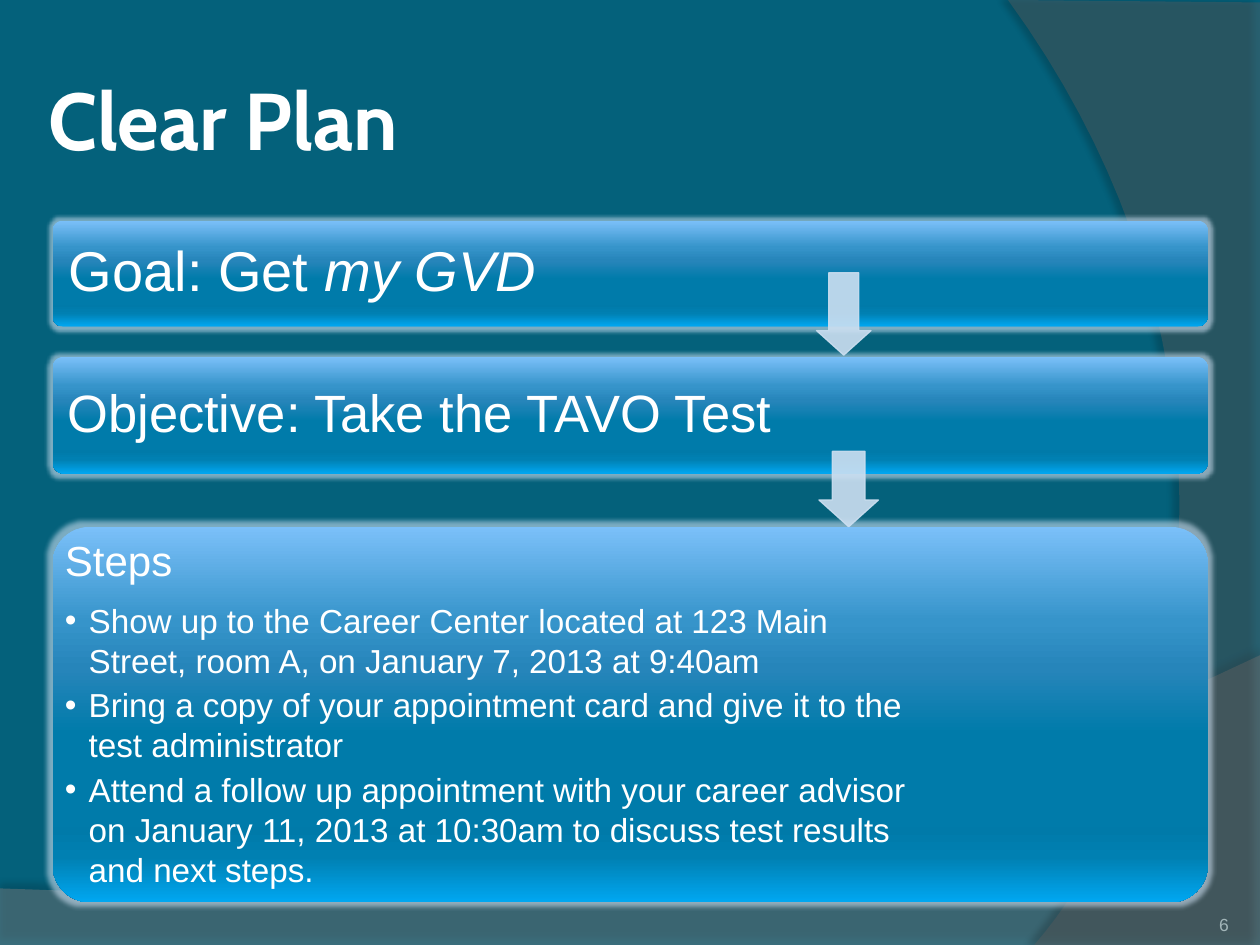
import pptx
import pptx.util
import pptx.dml.color
import pptx.enum.shapes
import pptx.enum.text
import pptx.oxml
import pptx.oxml.ns

Cm = pptx.util.Cm
Pt = pptx.util.Pt
RGB = pptx.dml.color.RGBColor
KIND = pptx.enum.shapes.MSO_SHAPE
ANCHOR = pptx.enum.text.MSO_ANCHOR
ALIGN = pptx.enum.text.PP_ALIGN
NS = pptx.oxml.ns.nsdecls("a")

TEAL = RGB(0x04, 0x61, 0x7B)
GRAY = RGB(0x7F, 0x7F, 0x7F)
DARK = RGB(0x5E, 0x5E, 0x5E)
WHITE = RGB(0xFF, 0xFF, 0xFF)
PALE = RGB(0xCC, 0xDF, 0xF1)
MUTED = RGB(0xA2, 0xB5, 0xB8)
BLACK = RGB(0, 0, 0)
STOPS = [
    (0, RGB(0x7B, 0xC0, 0xF9)), (25, RGB(0x36, 0x94, 0xCA)),
    (38, RGB(0x26, 0x85, 0xBA)), (55, RGB(0x00, 0x7B, 0xAA)),
    (80, RGB(0x00, 0x7A, 0xA9)), (88, RGB(0x00, 0x80, 0xB2)),
    (100, RGB(0x00, 0xA7, 0xF1)),
]
LEFT = 1.06
STEPS = [
    "Show up to the Career Center located at 123 Main Street, room A, "
    "on January 7, 2013 at 9:40am",
    "Bring a copy of your appointment card and give it to the "
    "test administrator",
    "Attend a follow up appointment with your career advisor on January 11, "
    "2013 at 10:30am to discuss test results and next steps.",
]


def node(xml):
    return pptx.oxml.parse_xml(xml)


def tint(color, alpha):
    return (f'<a:srgbClr val="{color}"><a:alpha val="{alpha * 1000}"/>'
            '</a:srgbClr>')


def fade(fill, color, alpha):
    fill.solid()
    fill.fore_color.rgb = color
    clr = fill._xPr.find(".//" + pptx.oxml.ns.qn("a:srgbClr"))
    clr.append(node(f'<a:alpha {NS} val="{alpha * 1000}"/>'))


def effect(shape, xml):
    shape._element.spPr.append(node(f"<a:effectLst {NS}>{xml}</a:effectLst>"))


def curve(start, one, two, end, count=40):
    points = []
    for step in range(count + 1):
        t = step / count
        u = 1 - t
        points.append(tuple(
            u**3 * a + 3 * u * u * t * b + 3 * u * t * t * c + t**3 * d
            for a, b, c, d in zip(start, one, two, end)))
    return points


def add_wave(slide, points, color, alpha, shade, angle):
    spots = [(Cm(x), Cm(y)) for x, y in points]
    pen = slide.shapes.build_freeform(*spots[0])
    pen.add_line_segments(spots[1:], close=True)
    shape = pen.convert_to_shape()
    fade(shape.fill, color, alpha)
    shape.line.fill.background()
    effect(shape, f'<a:outerShdw blurRad="{Pt(4)}" dist="{Pt(4)}" '
                  f'dir="{angle * 60000}">{tint(BLACK, shade)}</a:outerShdw>')


def add_card(slide, top, height):
    card = slide.shapes.add_shape(
        KIND.ROUNDED_RECTANGLE, Cm(LEFT), Cm(top), Cm(23.29), Cm(height))
    card.adjustments[0] = 0.1
    card.line.fill.background()
    stops = "".join(f'<a:gs pos="{place * 1000}"><a:srgbClr val="{color}"/>'
                    '</a:gs>' for place, color in STOPS)
    grad = node(f'<a:gradFill {NS} rotWithShape="1"><a:gsLst>{stops}</a:gsLst>'
                '<a:lin ang="5400000" scaled="0"/></a:gradFill>')
    props = card._element.spPr
    props.insert(props.index(props.find(pptx.oxml.ns.qn("a:ln"))), grad)
    effect(card, f'<a:glow rad="{Pt(5)}">{tint(PALE, 60)}</a:glow>')


def add_arrow(slide, left, top, width, height):
    arrow = slide.shapes.add_shape(
        KIND.DOWN_ARROW, Cm(left), Cm(top), Cm(width), Cm(height))
    arrow.adjustments[0] = 0.55
    arrow.adjustments[1] = 0.45
    arrow.shadow.inherit = False
    fade(arrow.fill, PALE, 90)
    fade(arrow.line.fill, PALE, 90)
    arrow.line.width = Pt(0.75)


def add_box(slide, left, top, width, height, inset, anchor=ANCHOR.MIDDLE):
    box = slide.shapes.add_textbox(Cm(left), Cm(top), Cm(width), Cm(height))
    frame = box.text_frame
    frame.word_wrap = True
    frame.vertical_anchor = anchor
    frame.margin_left = frame.margin_right = Cm(inset)
    frame.margin_top = frame.margin_bottom = Cm(inset)
    return frame


def add_run(para, text, size, color=WHITE, name="Arial", bold=None, slant=None):
    run = para.add_run()
    run.text = text
    font = run.font
    font.size, font.name = Pt(size), name
    font.bold, font.italic = bold, slant
    font.color.rgb = color


def space(para, line, after):
    para.line_spacing = line
    para.space_after = Pt(after)


def add_bullet(frame, text):
    para = frame.add_paragraph()
    para.level = 1
    space(para, 1.0, 2.85)
    props = para._p.get_or_add_pPr()
    props.set("marL", str(Cm(0.48)))
    props.set("indent", str(-Cm(0.48)))
    props.append(node(f'<a:buFont {NS} typeface="Arial"/>'))
    props.append(node(f'<a:buChar {NS} char="•"/>'))
    add_run(para, text, 19)


def main():
    deck = pptx.Presentation()
    deck.slide_width, deck.slide_height = Cm(25.4), Cm(19.05)
    slide = deck.slides.add_slide(deck.slide_layouts[6])
    back = slide.background.fill
    back.solid()
    back.fore_color.rgb = TEAL

    low = curve((25.4, 13.21), (14.2, 18.52), (9.93, 18.26), (0, 17.91))
    add_wave(slide, [(0, 19.05), (25.4, 19.05)] + low, GRAY, 45, 35, 270)
    side = curve((20.85, 19.05), (23.75, 15.72), (25.86, 7.62), (20.32, 0))
    add_wave(slide, [(25.4, 0.05), (25.4, 19.05)] + side, DARK, 40, 45, 180)

    title = add_box(slide, 0.84, 1.27, 23.06, 2.24, 0.13)
    add_run(title.paragraphs[0], "Clear Plan", 46, name="Cabin", bold=True)

    add_card(slide, 4.45, 2.13)
    goal = add_box(slide, LEFT, 4.45, 18.19, 2.13, 0.33).paragraphs[0]
    space(goal, 0.9, 11.2)
    add_run(goal, "Goal: Get", 32)
    add_run(goal, " my GVD", 32, slant=True)

    add_card(slide, 7.19, 2.36)
    aim = add_box(slide, LEFT, 7.19, 17.98, 2.36, 0.3).paragraphs[0]
    space(aim, 0.9, 10.5)
    add_run(aim, "Objective: Take the TAVO Test", 30)

    add_card(slide, 10.62, 7.57)
    plan = add_box(slide, LEFT, 10.62, 17.98, 7.57, 0.25)
    space(plan.paragraphs[0], 0.9, 8.4)
    add_run(plan.paragraphs[0], "Steps", 24)
    for text in STEPS:
        add_bullet(plan, text)

    add_arrow(slide, 16.46, 5.5, 1.1, 1.66)
    add_arrow(slide, 16.51, 9.1, 1.2, 1.52)

    page = add_box(slide, 22.66, 17.83, 2.11, 1.02, 0, ANCHOR.BOTTOM)
    page.paragraphs[0].alignment = ALIGN.RIGHT
    add_run(page.paragraphs[0], "6", 10, MUTED)
    deck.save("out.pptx")


if __name__ == "__main__":
    main()
